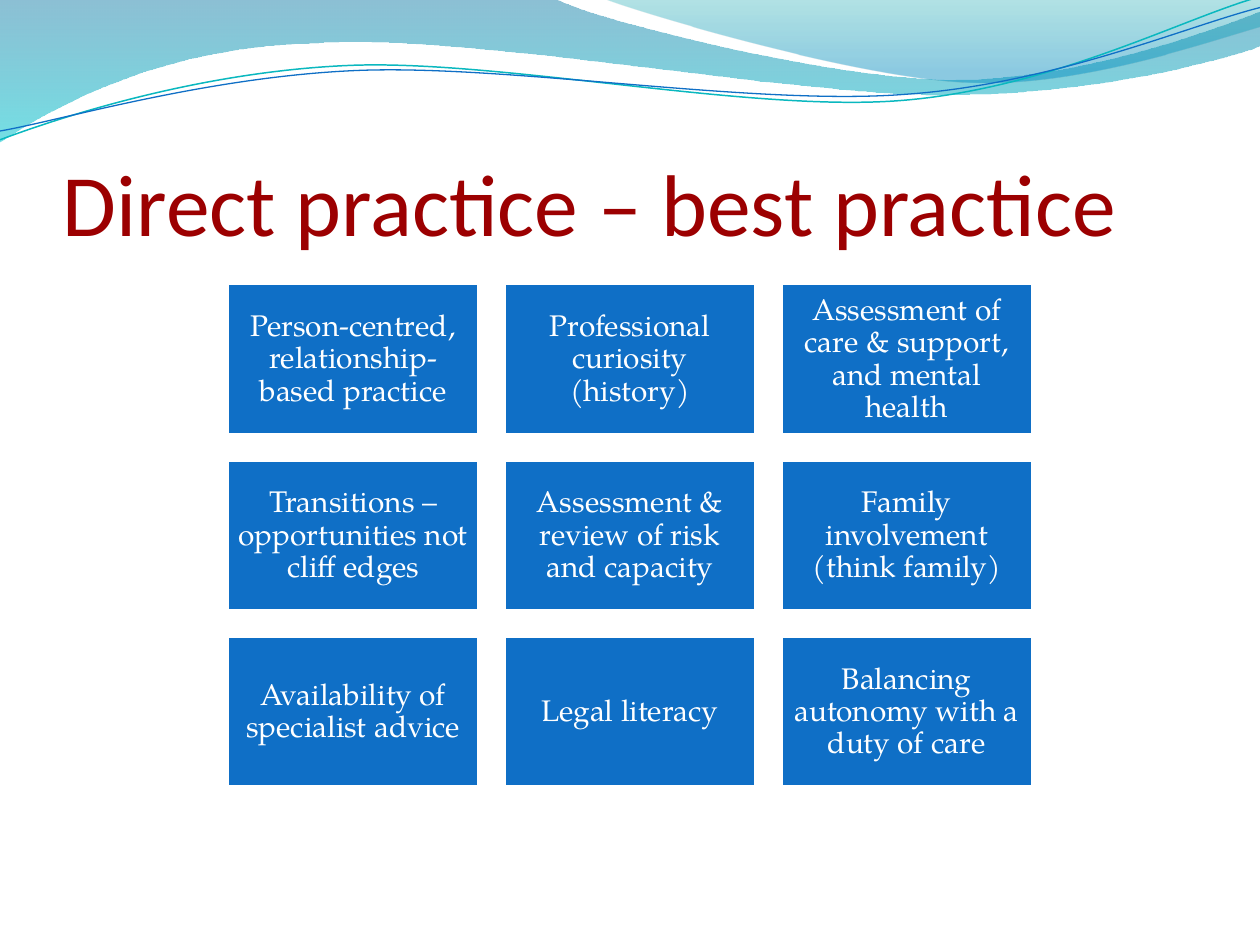
from lxml import etree
from pptx import Presentation
from pptx import util as u
from pptx.dml.color import RGBColor
from pptx.enum import shapes, text
from pptx.oxml.ns import qn

UNIT = 2.54  # wave coordinates are in units of 2.54 cm
BLUE, WHITE, RED = "0F6FC6", "FFFFFF", "9C0001"

# Each wave is a start point and segments: 2 numbers for a line, 6 for a curve
BACK_WAVE = [(0, 0), (4.4, -0.01),
             (4.76, 0.17, 6.64, 0.63, 7.58, 0.63),
             (8.53, 0.63, 9.58, 0.26, 10, 0.09), (10.01, 0.36),
             (9.83, 0.44, 8.7, 0.76, 7.46, 0.75),
             (6.22, 0.75, 3.82, 0.28, 2.57, 0.34),
             (1.29, 0.36, 0.46, 0.83, -0.01, 1.13), (0, 0)]
FRONT_WAVE = [(4.79, -0.01),
              (5.09, 0.11, 6.82, 0.62, 7.69, 0.65),
              (8.56, 0.69, 9.61, 0.32, 10, 0.21), (10, 0), (4.79, -0.01)]
TEAL_CURVE = [(0, 1.11),
              (0.48, 0.93, 1.58, 0.57, 2.77, 0.52),
              (3.95, 0.47, 5.93, 0.89, 7.13, 0.8),
              (8.33, 0.71, 9.38, 0.15, 9.98, -0.02)]
BLUE_CURVE = [(0, 1.04),
              (0.47, 0.96, 1.64, 0.61, 2.83, 0.56),
              (4.03, 0.51, 5.97, 0.84, 7.17, 0.75),
              (8.36, 0.67, 9.41, 0.21, 10, 0.06)]

PRACTICES = [
    ["Person-centred, relationship-based practice",
     "Professional curiosity (history)",
     "Assessment of care & support, and mental health"],
    ["Transitions – opportunities not cliff edges",
     "Assessment & review of risk and capacity",
     "Family involvement (think family)"],
    ["Availability of specialist advice",
     "Legal literacy",
     "Balancing autonomy with a duty of care"],
]


def color(value):
    return RGBColor.from_string(value)


def add_outline(page, segments, close):
    """Build the outline through all its points, then bend the curved segments."""
    points = [(u.Cm(UNIT * x), u.Cm(UNIT * y))
              for segment in segments
              for x, y in zip(segment[::2], segment[1::2])]
    builder = page.shapes.build_freeform(*points[0], scale=1.0)
    builder.add_line_segments(points[1:], close=close)
    outline = builder.convert_to_shape()
    outline.shadow.inherit = False

    steps = iter(list(outline.element.iter(qn("a:lnTo"))))
    for segment in segments[1:]:
        first = next(steps)
        if len(segment) == 6:
            bend = etree.Element(qn("a:cubicBezTo"))
            first.addprevious(bend)
            for step in (first, next(steps), next(steps)):
                bend.append(step[0])
                step.getparent().remove(step)
    return outline


def add_wave(page, segments, stops):
    """Filled wave; stops are (position, colour, opacity in percent)."""
    wave = add_outline(page, segments, close=True)
    wave.line.fill.background()
    wave.fill.gradient()
    wave.fill.gradient_angle = 270
    for stop, (position, value, _) in zip(wave.fill.gradient_stops, stops):
        stop.position = position
        stop.color.rgb = color(value)
    tints = list(wave.element.spPr.iter(qn("a:srgbClr")))
    for tint, (_, _, opacity) in zip(tints, stops):
        etree.SubElement(tint, qn("a:alpha"), val=str(opacity * 1000))


def add_curve(page, segments, value, width):
    curve = add_outline(page, segments, close=False)
    curve.fill.background()
    curve.line.color.rgb = color(value)
    curve.line.width = u.Pt(width)


def write(box, words, *, font, size, value, align, anchor, insets, spacing=1.0):
    frame = box.text_frame
    frame.word_wrap = True
    frame.vertical_anchor = anchor
    (frame.margin_left, frame.margin_top,
     frame.margin_right, frame.margin_bottom) = (u.Cm(inset) for inset in insets)
    para = frame.paragraphs[0]
    para.alignment = align
    para.line_spacing = spacing
    span = para.add_run()
    span.text = words
    span.font.name = font
    span.font.size = u.Pt(size)
    span.font.color.rgb = color(value)


def add_title(page, words):
    box = page.shapes.add_textbox(u.Cm(1.27), u.Cm(1.95), u.Cm(22.86), u.Cm(3.17))
    write(box, words, font="Calibri", size=50, value=RED, align=text.PP_ALIGN.LEFT,
          anchor=text.MSO_ANCHOR.BOTTOM, insets=(0, 0.13, 0, 0))


def add_tile(page, words, left, top, width, height):
    box = page.shapes.add_shape(shapes.MSO_SHAPE.RECTANGLE, u.Cm(left), u.Cm(top),
                                u.Cm(width), u.Cm(height))
    box.shadow.inherit = False
    box.fill.solid()
    box.fill.fore_color.rgb = color(BLUE)
    box.line.color.rgb = color(WHITE)
    box.line.width = u.Pt(2)
    write(box, words, font="TeX Gyre Pagella", size=17, value=WHITE,
          align=text.PP_ALIGN.CENTER, anchor=text.MSO_ANCHOR.MIDDLE,
          insets=[0.17] * 4, spacing=0.9)


def add_tiles(page, rows):
    left, top, width, height, gap = 4.58, 5.72, 5.08, 3.05, 0.5
    for i, row in enumerate(rows):
        for j, words in enumerate(row):
            add_tile(page, words, left + j * (width + gap), top + i * (height + gap),
                     width, height)


def main():
    deck = Presentation()
    deck.slide_width, deck.slide_height = u.Cm(25.4), u.Cm(19.05)
    page = deck.slides.add_slide(deck.slide_layouts[6])

    # Waves along the top edge
    add_wave(page, BACK_WAVE, [(0, "0074A1", 45), (1, "00C6CF", 55)])
    add_wave(page, FRONT_WAVE, [(0, "00A1A9", 30), (0.8, "008BBF", 45)])
    add_curve(page, TEAL_CURVE, "0AB8BF", 0.85)
    add_curve(page, BLUE_CURVE, BLUE, 0.75)

    # Title and grid of practices
    add_title(page, "Direct practice – best practice")
    add_tiles(page, PRACTICES)

    deck.save("out.pptx")


if __name__ == "__main__":
    main()
